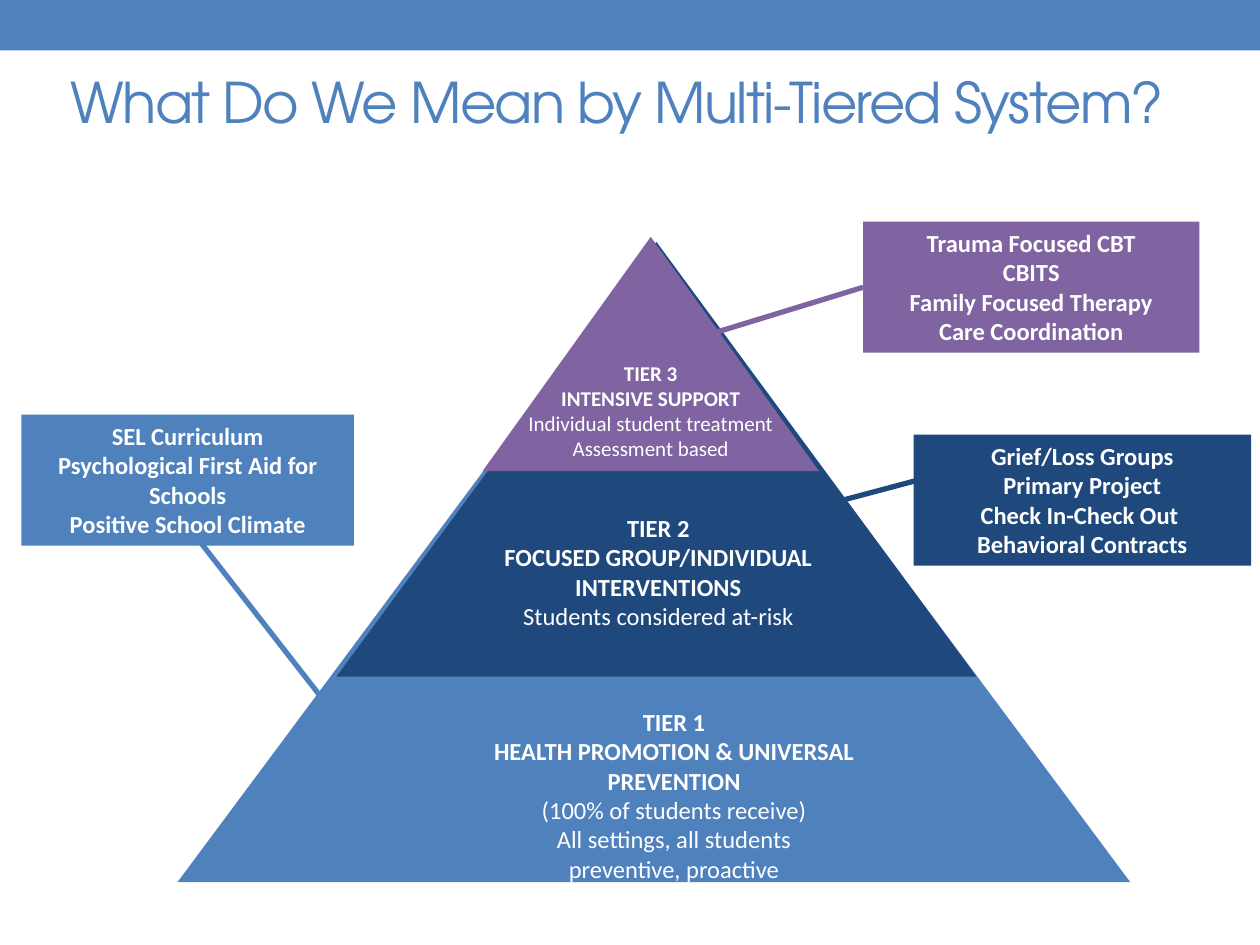
from lxml.etree import SubElement
from pptx import Presentation
from pptx.dml.color import RGBColor
from pptx.enum.shapes import MSO_CONNECTOR as Connector, MSO_SHAPE as Shape
from pptx.enum.text import MSO_ANCHOR as Anchor, MSO_AUTO_SIZE as AutoSize, PP_ALIGN as Align
from pptx.oxml.ns import qn
from pptx.util import Inches, Pt

COLORS = {
    "tier1": "4F81BD",
    "tier2": "1F497D",
    "tier3": "8064A2",
    "text": "FFFFFF",
}
COLUMNS, ROWS = 100, 75


class TierSlide:
    """Holds the slide and its style; lengths are grid columns and rows."""

    body_font, title_font = "Calibri", "TeX Gyre Adventor"

    def __init__(self, deck):
        self.cell_width = deck.slide_width / COLUMNS
        self.cell_height = deck.slide_height / ROWS
        self.slide = deck.slides.add_slide(deck.slide_layouts[5])
        self.shapes = self.slide.shapes

    def grid(self, *lengths):
        """Turn alternating columns and rows into slide lengths."""
        cells = (self.cell_width, self.cell_height)
        return [round(length * cells[i % 2]) for i, length in enumerate(lengths)]

    def add_run(self, paragraph, text, font, size, color, bold=False):
        run = paragraph.add_run()
        run.text = text
        run.font.name, run.font.size, run.font.bold = font, Pt(size), bold
        run.font.color.rgb = RGBColor.from_string(COLORS[color])
        return run

    def title(self, text, place):
        title = self.shapes.title
        title.left, title.top, title.width, title.height = self.grid(*place)
        frame = title.text_frame
        frame.auto_size, frame.vertical_anchor = AutoSize.NONE, Anchor.MIDDLE
        heading = frame.paragraphs[0]
        heading.alignment = Align.CENTER
        run = self.add_run(heading, text, self.title_font, 32, "tier1")
        run._r.get_or_add_rPr().set("spc", "-100")

    def block(self, kind, color, place):
        block = self.shapes.add_shape(kind, *self.grid(*place))
        block.shadow.inherit = False
        block.fill.solid()
        block.fill.fore_color.rgb = RGBColor.from_string(COLORS[color])
        block.line.fill.background()
        return block

    def add_lines(self, holder, bold_lines, plain_lines=(), size=14):
        frame = holder.text_frame
        frame.word_wrap, frame.auto_size = True, AutoSize.SHAPE_TO_FIT_TEXT
        frame.vertical_anchor = Anchor.TOP
        for index, line in enumerate([*bold_lines, *plain_lines]):
            paragraph = frame.add_paragraph() if index else frame.paragraphs[0]
            paragraph.alignment = Align.CENTER
            self.add_run(paragraph, line, self.body_font, size, "text",
                         index < len(bold_lines))

    def label(self, place, bold_lines, plain_lines, size=14):
        box = self.shapes.add_textbox(*self.grid(*place))
        self.add_lines(box, bold_lines, plain_lines, size)

    def examples(self, color, place, lines):
        box = self.block(Shape.RECTANGLE, color, place)
        self.add_lines(box, lines)
        return box

    def leader(self, color, start, end):
        leader = self.shapes.add_connector(Connector.STRAIGHT, *self.grid(*start, *end))
        leader.line.color.rgb = RGBColor.from_string(COLORS[color])
        leader.line.width = Pt(3)
        SubElement(leader._element.spPr, qn("a:effectLst"))
        return leader


def main():
    deck = Presentation()
    deck.slide_width, deck.slide_height = Inches(10), Inches(7.5)
    page = TierSlide(deck)

    # Top band and title
    page.block(Shape.RECTANGLE, "tier1", (0, 0, COLUMNS, 4))
    page.title("What Do We Mean by Multi-Tiered System?", (0, 4.8, 98, 6.4))

    # Pyramid, from the widest tier to the peak
    pyramid = {
        "tier1": (14.1, 19.2, 75.6, 50.8),
        "tier2": (26.7, 19.2, 50.8, 34.5),
        "tier3": (38.3, 18.8, 26.7, 18.6),
    }
    for tier, place in pyramid.items():
        page.block(Shape.ISOSCELES_TRIANGLE, tier, place)

    # Tier descriptions
    page.label((33, 55.6, 41, 12.8),
               ["TIER 1", "HEALTH PROMOTION & UNIVERSAL PREVENTION"],
               ["(100% of students receive)", "All settings, all students",
                "preventive, proactive"])
    focused = page.block(Shape.RECTANGLE, "tier2", (37.2, 40.2, 30.1, 10.4))
    page.add_lines(focused, ["TIER 2", "FOCUSED GROUP/INDIVIDUAL INTERVENTIONS"],
                   ["Students considered at-risk"])
    page.label((40, 28.1, 23.3, 9.1), ["TIER 3", "INTENSIVE SUPPORT"],
               ["Individual student treatment", "Assessment based"], size=12)

    # Example programs with their leader lines
    page.examples("tier1", (1.7, 32.9, 26.4, 10.4),
                  ["SEL Curriculum", "Psychological First Aid for Schools",
                   "Positive School Climate"])
    page.leader("tier1", (15.8, 42.9), (25.7, 55.6))
    page.examples("tier2", (72.5, 34.5, 26.8, 10.4),
                  ["Grief/Loss Groups", "Primary Project",
                   "Check In-Check Out ", "Behavioral Contracts"])
    page.leader("tier2", (65, 40.2), (74, 37.8))
    intensive = page.examples("tier3", (68.5, 17.6, 26.7, 10.4),
                              ["Trauma Focused CBT", "CBITS",
                               "Family Focused Therapy", "Care Coordination"])
    page.leader("tier3", (56.1, 26.6), (68.5, 22.8)).end_connect(intensive, 1)

    deck.save("out.pptx")


if __name__ == "__main__":
    main()
